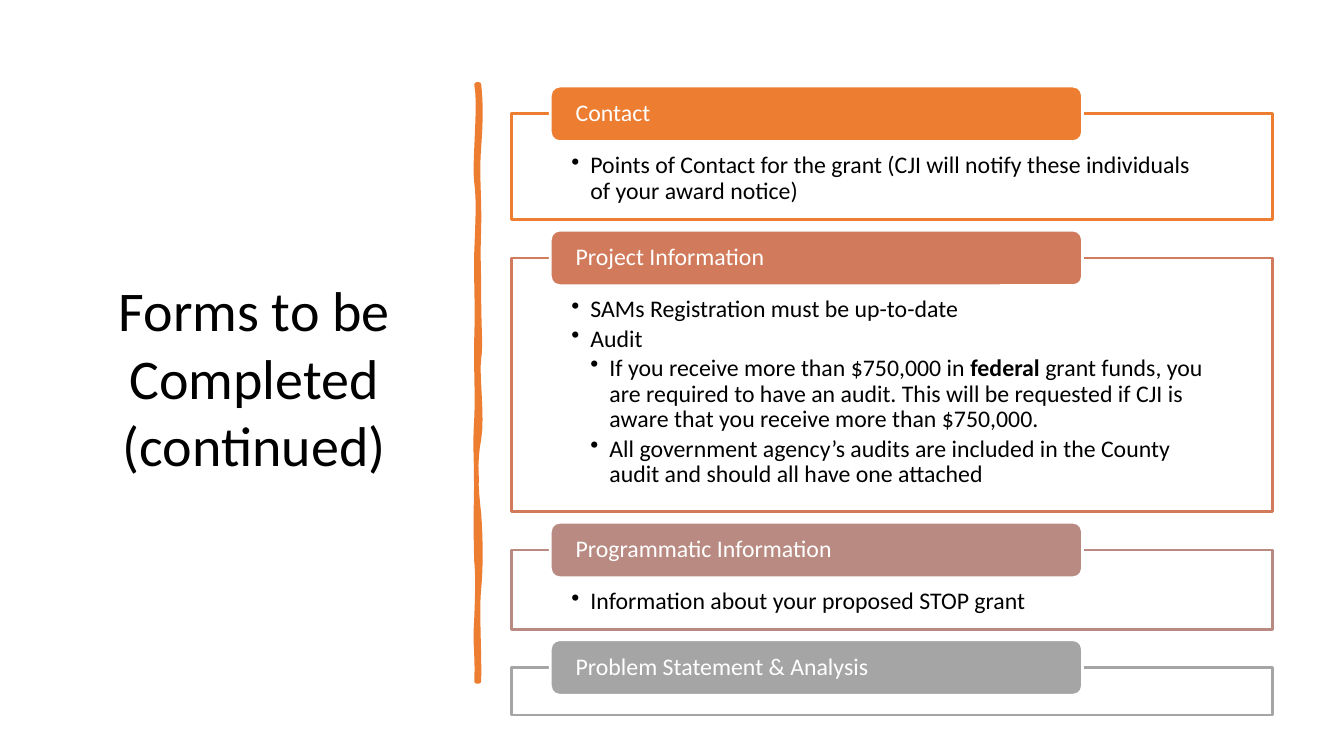
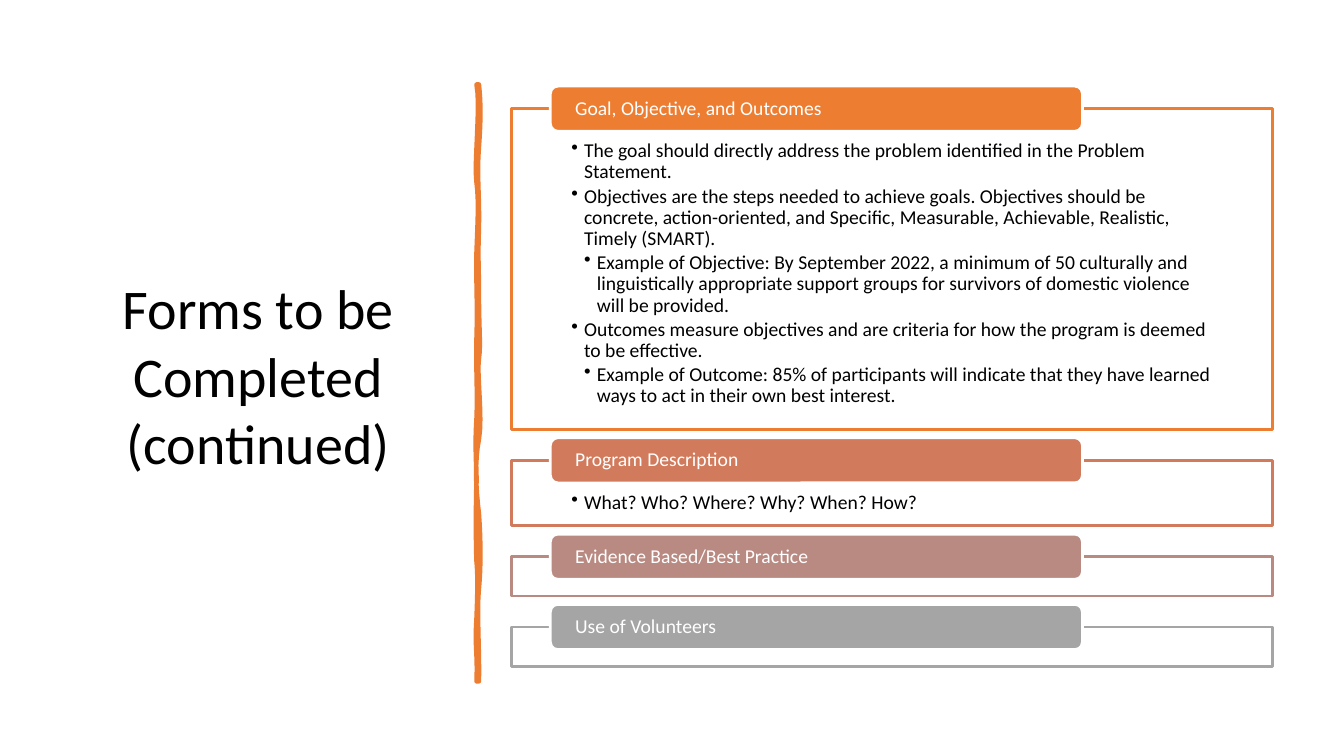
from dataclasses import dataclass

from lxml import etree
from pptx import Presentation
from pptx import util as u
from pptx.dml.color import RGBColor
from pptx.enum import shapes, text
from pptx.oxml import ns


@dataclass(frozen=True)
class Theme:
    font: str = "Calibri"
    ink: str = "000000"
    paper: str = "FFFFFF"
    accents: tuple = ("ED7D31", "D17B5C", "B98A82", "A5A5A5")
    title_size: float = 40
    border: float = 2
    stroke: float = 3.25


@dataclass(frozen=True)
class CardStyle:
    """Type size in points, all lengths in centimetres."""
    size: float
    top: float
    gap: float
    tab_height: float
    inset_top: float
    inset_bottom: float
    indent: float


LARGE = CardStyle(17, 2.87, 0.96, 1.4, 0.99, 0.33, 0.48)
SMALL = CardStyle(14, 2.74, 0.78, 1.14, 0.81, 0.28, 0.32)

# Brush stroke edges: two control points and the end height of each curve
STROKE_TOP, STROKE_BOTTOM = 2.13, 17.17
RIGHT_X, LEFT_X = 12.07, 12.01
RIGHT_EDGE = [
    (12.12, 2.59, 12.12, 3.02, 3.71), (12.01, 4.39, 12.09, 4.95, 5.74),
    (12.04, 6.53, 12.07, 6.65, 7.47), (12.07, 8.26, 12.12, 8.69, 9.04),
    (12.01, 9.4, 12.17, 10.52, 11.07), (11.96, 11.61, 11.99, 12.29, 12.95),
    (12.12, 13.61, 12.12, 14.33, 14.83), (12.01, 15.32, 12.09, 16.51, 17.17),
]
LEFT_EDGE = [
    (12.04, 16.41, 11.96, 16.36, 15.57), (12.04, 14.81, 12.04, 14.48, 14.15),
    (11.99, 13.82, 11.99, 12.57, 12.12), (12.01, 11.66, 11.96, 11.3, 10.54),
    (12.04, 9.8, 11.99, 9.47, 8.51), (12.04, 7.57, 11.99, 7.14, 6.35),
    (12.04, 5.54, 12.07, 5.08, 4.6), (11.94, 4.14, 12.12, 2.64, 2.13),
]


def edge_points(x, y, curves, steps=8):
    """Sample a chain of cubic curves whose nodes all lie on x."""
    points = [(x, y)]
    for x1, y1, x2, y2, end in curves:
        for step in range(1, steps + 1):
            t = step / steps
            weights = ((1 - t) ** 3, 3 * t * (1 - t) ** 2, 3 * t * t * (1 - t), t ** 3)
            points.append((sum(w * v for w, v in zip(weights, (x, x1, x2, x))),
                           sum(w * v for w, v in zip(weights, (y, y1, y2, end)))))
        y = end
    return points


class SlideBuilder:
    CARD_LEFT, CARD_WIDTH, CARD_INSET = 12.9, 19.18, 1.5
    TAB_LEFT, TAB_WIDTH, TAB_INSET = 13.87, 13.41, 0.57

    def __init__(self, deck, theme):
        self.deck, self.theme, self.slide = deck, theme, None

    def new_slide(self):
        self.slide = self.deck.slides.add_slide(self.deck.slide_layouts[6])

    def paint(self, shape, fill, line, width):
        shape.shadow.inherit = False
        shape.fill.solid()
        shape.fill.fore_color.rgb = RGBColor.from_string(fill)
        shape.line.color.rgb = RGBColor.from_string(line)
        shape.line.width = u.Pt(width)

    def format_runs(self, para, size, color):
        for span in para.runs:
            span.font.name = self.theme.font
            span.font.size = u.Pt(size)
            span.font.color.rgb = RGBColor.from_string(color)

    def set_frame(self, frame, anchor, left, top, bottom):
        frame.word_wrap = True
        frame.vertical_anchor = anchor
        frame.margin_left = frame.margin_right = u.Cm(left)
        frame.margin_top, frame.margin_bottom = u.Cm(top), u.Cm(bottom)

    def title(self, words, left, top):
        box = self.slide.shapes.add_textbox(u.Cm(left), u.Cm(top), u.Cm(9.45), u.Cm(5.38))
        box.text_frame.word_wrap = True
        box.text_frame.text = words
        para = box.text_frame.paragraphs[0]
        para.alignment = text.PP_ALIGN.CENTER
        self.format_runs(para, self.theme.title_size, self.theme.ink)

    def brush_stroke(self):
        points = (edge_points(RIGHT_X, STROKE_TOP, RIGHT_EDGE)
                  + edge_points(LEFT_X, STROKE_BOTTOM, LEFT_EDGE))
        scaled = [(u.Cm(x), u.Cm(y)) for x, y in points]
        outline = self.slide.shapes.build_freeform(*scaled[0])
        outline.add_line_segments(scaled[1:], close=True)
        color = self.theme.accents[0]
        self.paint(outline.convert_to_shape(), color, color, self.theme.stroke)

    def bullet(self, para, level, pieces, style):
        """Write one bullet; every second piece is bold."""
        for index, piece in enumerate(pieces):
            span = para.add_run()
            span.text = piece
            span.font.bold = index % 2 == 1
        para.level = level
        para.alignment = text.PP_ALIGN.LEFT
        para.line_spacing = 0.9
        para.space_after = u.Pt(0.15 * style.size)
        props = para._p.get_or_add_pPr()
        props.set("marL", str(u.Cm(style.indent * level)))
        props.set("indent", str(-u.Cm(style.indent)))
        etree.SubElement(props, ns.qn("a:buChar")).set("char", "•")
        self.format_runs(para, style.size, self.theme.ink)

    def card(self, heading, bullets, top, height, color, style):
        # Outlined frame with the bullets
        frame = self.slide.shapes.add_shape(
            shapes.MSO_SHAPE.RECTANGLE, u.Cm(self.CARD_LEFT), u.Cm(top),
            u.Cm(self.CARD_WIDTH), u.Cm(height))
        self.paint(frame, self.theme.paper, color, self.theme.border)
        body = frame.text_frame
        self.set_frame(body, text.MSO_ANCHOR.TOP, self.CARD_INSET,
                       style.inset_top, style.inset_bottom)
        for index, (level, *pieces) in enumerate(bullets):
            para = body.add_paragraph() if index else body.paragraphs[0]
            self.bullet(para, level, pieces, style)

        # Heading tab, centred on the top edge of the frame
        tab = self.slide.shapes.add_shape(
            shapes.MSO_SHAPE.ROUNDED_RECTANGLE, u.Cm(self.TAB_LEFT),
            u.Cm(top - style.tab_height / 2), u.Cm(self.TAB_WIDTH), u.Cm(style.tab_height))
        self.paint(tab, color, self.theme.paper, self.theme.border)
        self.set_frame(tab.text_frame, text.MSO_ANCHOR.MIDDLE, self.TAB_INSET, 0, 0)
        tab.text_frame.text = heading
        para = tab.text_frame.paragraphs[0]
        para.alignment = text.PP_ALIGN.LEFT
        para.line_spacing = 0.9
        self.format_runs(para, style.size, self.theme.paper)

    def cards(self, items, style):
        top = style.top
        for (heading, height, bullets), color in zip(items, self.theme.accents):
            self.card(heading, bullets, top, height, color, style)
            top += height + style.gap


# Cards: heading, frame height, bullets as (level, text pieces)
FIRST_CARDS = [
    ("Contact", 2.67, [
        (1, "Points of Contact for the grant (CJI will notify these individuals "
            "of your award notice)"),
    ]),
    ("Project Information", 6.4, [
        (1, "SAMs Registration must be up-to-date"),
        (1, "Audit"),
        (2, "If you receive more than $750,000 in ", "federal",
            " grant funds, you are required to have an audit. This will be requested "
            "if CJI is aware that you receive more than $750,000."),
        (2, "All government agency’s audits are included in the County audit and "
            "should all have one attached"),
    ]),
    ("Programmatic Information", 2.0, [
        (1, "Information about your proposed STOP grant"),
    ]),
    ("Problem Statement & Analysis", 1.2, []),
]
SECOND_CARDS = [
    ("Goal, Objective, and Outcomes", 8.08, [
        (1, "The goal should directly address the problem identified in the "
            "Problem Statement."),
        (1, "Objectives are the steps needed to achieve goals. Objectives should be "
            "concrete, action-oriented, and Specific, Measurable, Achievable, "
            "Realistic, Timely (SMART)."),
        (2, "Example of Objective: By September 2022, a minimum of 50 culturally and "
            "linguistically appropriate support groups for survivors of domestic "
            "violence will be provided."),
        (1, "Outcomes measure objectives and are criteria for how the program is "
            "deemed to be effective."),
        (2, "Example of Outcome: 85% of participants will indicate that they have "
            "learned ways to act in their own best interest."),
    ]),
    ("Program Description", 1.65, [(1, "What? Who? Where? Why? When? How?")]),
    ("Evidence Based/Best Practice", 0.99, []),
    ("Use of Volunteers", 0.99, []),
]


def main():
    deck = Presentation()
    deck.slide_width, deck.slide_height = u.Cm(33.87), u.Cm(19.05)
    builder = SlideBuilder(deck, Theme())
    pages = [(FIRST_CARDS, LARGE, 1.68, 6.83), (SECOND_CARDS, SMALL, 1.78, 6.78)]
    for items, style, title_left, title_top in pages:
        builder.new_slide()
        builder.brush_stroke()
        builder.cards(items, style)
        builder.title("Forms to be Completed (continued)", title_left, title_top)
    deck.save("out.pptx")


if __name__ == "__main__":
    main()
